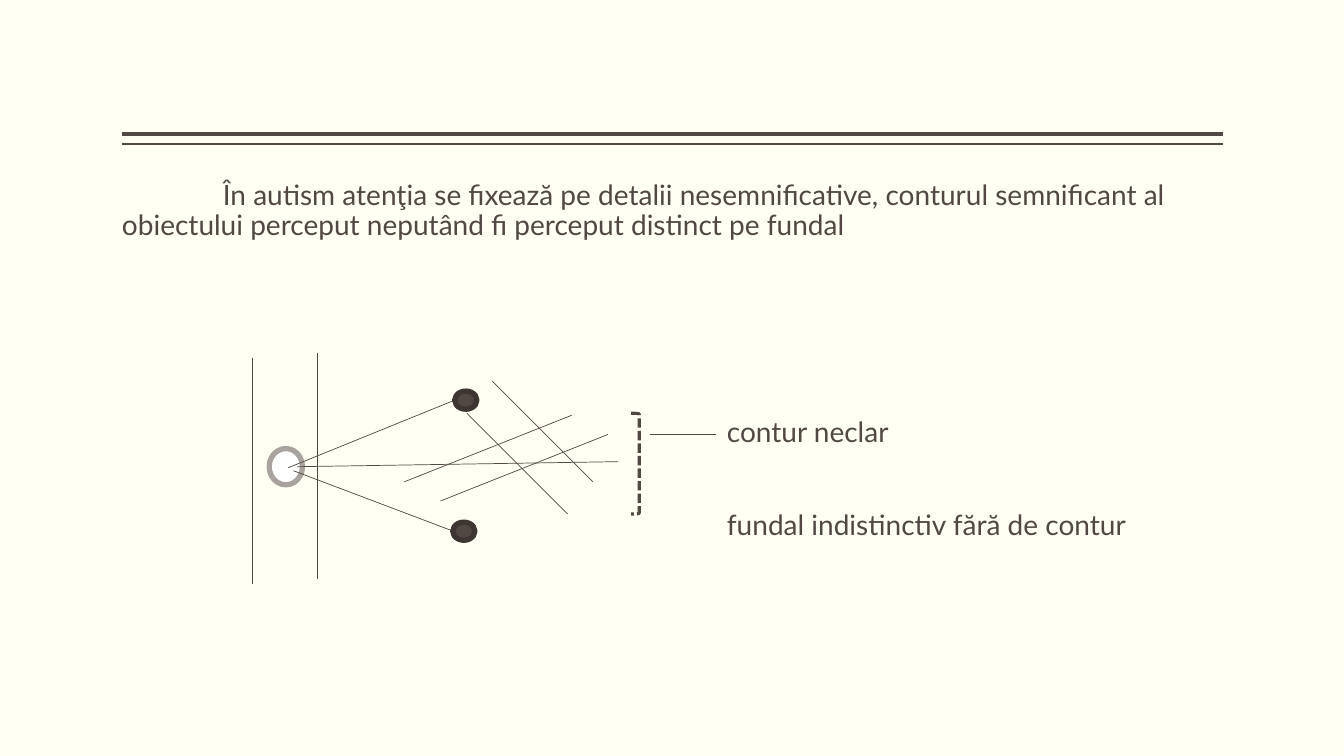
from pptx import Presentation
from pptx.dml.color import RGBColor
from pptx.enum.dml import MSO_LINE
from pptx.enum.shapes import MSO_CONNECTOR, MSO_SHAPE as SHAPE
from pptx.enum.text import MSO_ANCHOR, MSO_AUTO_SIZE, PP_ALIGN
from pptx.oxml.ns import qn
from pptx.util import Inches, Pt
from lxml import etree

BACKGROUND = RGBColor(0xFF, 0xFF, 0xF3)
INK = RGBColor(0x51, 0x48, 0x43)
DARK = RGBColor(0x3C, 0x35, 0x32)
GREY = RGBColor(0xA8, 0xA3, 0x9E)
WHITE = RGBColor(0xFF, 0xFF, 0xFF)
FONT = "Lato"


def add_line(s, x1, y1, x2, y2, width=0.5):
    line = s.shapes.add_connector(
        MSO_CONNECTOR.STRAIGHT, Inches(x1), Inches(y1), Inches(x2), Inches(y2))
    line.line.color.rgb = INK
    line.line.width = Pt(width)
    etree.SubElement(line._element.spPr, qn("a:effectLst"))


def add_outlined(s, kind, x, y, w, h, fill, color, width):
    sp = s.shapes.add_shape(kind, Inches(x), Inches(y), Inches(w), Inches(h))
    sp.shadow.inherit = False
    if fill is None:
        sp.fill.background()
    else:
        sp.fill.solid()
        sp.fill.fore_color.rgb = fill
    sp.line.color.rgb = color
    sp.line.width = Pt(width)
    return sp


def add_header_rule(s, x, y, w):
    add_line(s, x, y, x + w, y, 3)
    add_line(s, x, y + 0.1, x + w, y + 0.1, 1)


def format_paragraph(p, margin, first_indent, before):
    p.alignment = PP_ALIGN.LEFT
    p.line_spacing = 0.9
    p.space_before = Pt(before)
    p.space_after = Pt(0)
    pPr = p._p.get_or_add_pPr()
    pPr.set("marL", str(Inches(margin)))
    pPr.set("indent", str(Inches(first_indent)))
    etree.SubElement(pPr, qn("a:buNone"))


def add_body(s, x, y, w, h):
    body = s.placeholders[1]
    body.left, body.top, body.width, body.height = map(Inches, (x, y, w, h))
    tf = body.text_frame
    tf.word_wrap = True
    tf.auto_size = MSO_AUTO_SIZE.NONE
    tf.vertical_anchor = MSO_ANCHOR.TOP
    tf.margin_left = tf.margin_right = 0
    tf.margin_top = tf.margin_bottom = Inches(0.05)

    # Statement, then the two diagram labels: text, margin, first indent, space before
    paragraphs = [
        ("În autism atenţia se fixează pe detalii nesemnificative, conturul "
         "semnificant al obiectului perceput neputând fi perceput distinct pe fundal",
         0, 1, 0),
        ("contur neclar", 6, 0, 126),
        ("fundal indistinctiv fără de contur", 6, 0, 45),
    ]
    tf.text = "\n".join(text for text, *_ in paragraphs)
    for p, (_, *layout) in zip(tf.paragraphs, paragraphs):
        format_paragraph(p, *layout)
        for r in p.runs:
            r.font.name = FONT
            r.font.size = Pt(20)
            r.font.color.rgb = INK


def add_diagram(s, x, y):
    # Two walls around the eye
    add_line(s, x, y + 0.05, x, y + 2.29)
    add_line(s, x + 0.65, y, x + 0.65, y + 2.24)
    add_outlined(s, SHAPE.FLOWCHART_CONNECTOR, x + 0.17, y + 0.95, 0.33, 0.36,
                 WHITE, GREY, 3.78)

    # Lines of sight, crossing background strokes and label leader
    for x1, y1, x2, y2 in [
        (0.45, 1.13, 3.63, 1.08), (0.41, 1.17, 1.97, 1.76), (0.36, 1.14, 2.01, 0.47),
        (2.38, 0.28, 3.38, 1.28), (2.13, 0.6, 3.13, 1.6),
        (1.51, 1.28, 3.17, 0.62), (1.87, 1.47, 3.53, 0.81),
        (3.95, 0.81, 4.6, 0.81),
    ]:
        add_line(s, x + x1, y + y1, x + x2, y + y2)

    # Insignificant details
    for dx, dy in [(2.01, 0.38), (1.99, 1.68)]:
        add_outlined(s, SHAPE.FLOWCHART_CONNECTOR, x + dx, y + dy, 0.22, 0.18,
                     INK, DARK, 3.78)

    # Unclear contour
    contour = add_outlined(s, SHAPE.RIGHT_BRACKET, x + 3.76, y + 0.6, 0.08, 1,
                           None, INK, 2.25)
    contour.line.dash_style = MSO_LINE.SQUARE_DOT


def main():
    prs = Presentation()
    prs.slide_width, prs.slide_height = Inches(13.33), Inches(7.5)
    s = prs.slides.add_slide(prs.slide_layouts[1])
    s.background.fill.solid()
    s.background.fill.fore_color.rgb = BACKGROUND
    title = s.shapes.title._element
    title.getparent().remove(title)

    add_header_rule(s, 1.21, 1.33, 10.92)
    add_body(s, 1.21, 1.75, 10.92, 5)
    add_diagram(s, 2.5, 3.5)
    prs.save("out.pptx")


if __name__ == "__main__":
    main()
